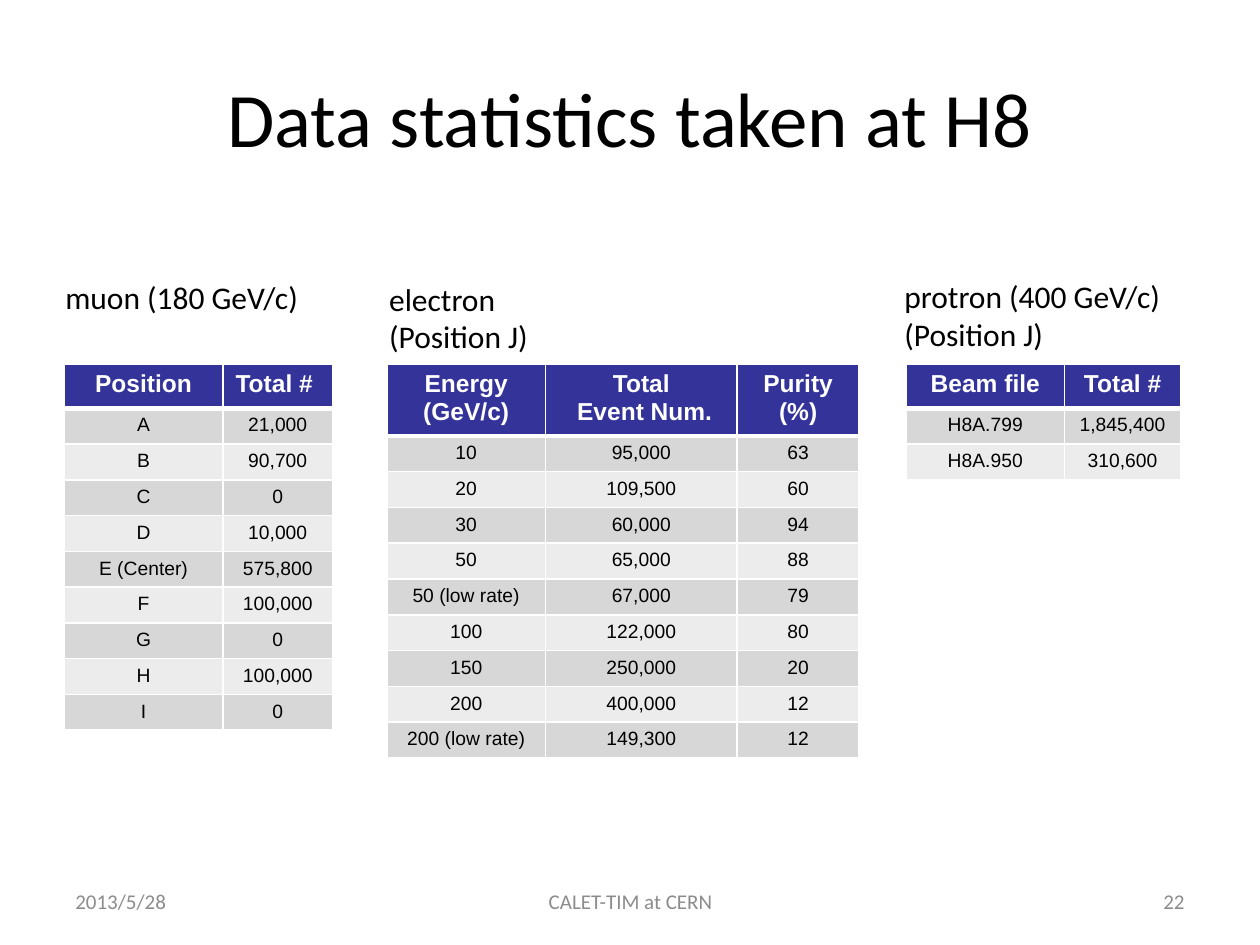
from dataclasses import dataclass

from lxml.etree import SubElement
from pptx import Presentation
from pptx.dml.color import RGBColor
from pptx.enum.text import MSO_ANCHOR, MSO_AUTO_SIZE, PP_ALIGN
from pptx.oxml.ns import qn
from pptx.slide import Slide
from pptx.table import _Cell
from pptx.text.text import TextFrame
from pptx.util import Inches, Pt

WHITE = RGBColor(0xFF, 0xFF, 0xFF)
BLACK = RGBColor(0x00, 0x00, 0x00)
GREY = RGBColor(0x8C, 0x8C, 0x8C)
NAVY = RGBColor(0x33, 0x33, 0x99)
BANDS = (RGBColor(0xD7, 0xD7, 0xD7), RGBColor(0xEC, 0xEC, 0xEC))

TABLE_TOP = Inches(2.89)
BODY_ROW_HEIGHT = Inches(2.55) // 9


@dataclass
class Label:
    text: str
    left: float
    top: float
    width: float
    height: float
    align: PP_ALIGN = PP_ALIGN.LEFT


@dataclass
class BeamTable:
    left: float
    columns: list[float]
    header_height: float
    header: list[str]
    rows: list[list[str]]
    last_header_align: PP_ALIGN = PP_ALIGN.CENTER


def write(frame: TextFrame, text: str, size: int, color: RGBColor,
          font: str = "Calibri", align: PP_ALIGN = PP_ALIGN.LEFT,
          bold: bool = False) -> None:
    for index, line in enumerate(text.split("\n")):
        paragraph = frame.add_paragraph() if index else frame.paragraphs[0]
        paragraph.alignment = align
        run = paragraph.add_run()
        run.text = line
        run.font.name = font
        run.font.size = Pt(size)
        run.font.bold = bold
        run.font.color.rgb = color


def add_label(slide: Slide, label: Label, size: int, color: RGBColor,
              anchor: MSO_ANCHOR, wrap: bool) -> None:
    box = slide.shapes.add_textbox(Inches(label.left), Inches(label.top),
                                   Inches(label.width), Inches(label.height))
    frame = box.text_frame
    frame.word_wrap = wrap
    frame.auto_size = MSO_AUTO_SIZE.NONE if wrap else MSO_AUTO_SIZE.SHAPE_TO_FIT_TEXT
    frame.vertical_anchor = anchor
    write(frame, label.text, size, color, align=label.align)


def set_borders(cell: _Cell, top: int, bottom: int) -> None:
    properties = cell._tc.get_or_add_tcPr()
    for side, width in (("L", 1), ("R", 1), ("T", top), ("B", bottom)):
        line = SubElement(properties, qn(f"a:ln{side}"), w=str(Pt(width)))
        fill = SubElement(line, qn("a:solidFill"))
        SubElement(fill, qn("a:srgbClr"), val=str(WHITE))


def add_beam_table(slide: Slide, beam: BeamTable) -> None:
    header_height = Inches(beam.header_height)
    table = slide.shapes.add_table(
        len(beam.rows) + 1, len(beam.columns), Inches(beam.left), TABLE_TOP,
        Inches(sum(beam.columns)),
        header_height + BODY_ROW_HEIGHT * len(beam.rows)).table
    for column, width in zip(table.columns, beam.columns):
        column.width = Inches(width)
    for r, values in enumerate([beam.header, *beam.rows]):
        table.rows[r].height = BODY_ROW_HEIGHT if r else header_height
        for c, value in enumerate(values):
            cell = table.cell(r, c)
            # Thick rule between the header and the body
            set_borders(cell, top=3 if r == 1 else 1, bottom=1 if r else 3)
            cell.fill.solid()
            cell.fill.fore_color.rgb = BANDS[(r - 1) % 2] if r else NAVY
            is_last_header = r == 0 and c == len(values) - 1
            align = beam.last_header_align if is_last_header else PP_ALIGN.CENTER
            write(cell.text_frame, value, 11 if r else 14,
                  BLACK if r else WHITE, "Arial", align, bold=r == 0)


BEAM_LABELS = [
    Label("muon (180 GeV/c)", 0.42, 2.16, 2.07, 0.4),
    Label("electron\n(Position J)", 2.99, 2.17, 1.32, 0.71),
    Label("protron (400 GeV/c)\n(Position J)", 7.08, 2.15, 2.26, 0.71),
]

FOOTER_LABELS = [
    Label("2013/5/28", 0.5, 6.95, 2.33, 0.4),
    Label("CALET-TIM at CERN", 3.42, 6.95, 3.17, 0.4, PP_ALIGN.CENTER),
    Label("22", 7.17, 6.95, 2.33, 0.4, PP_ALIGN.RIGHT),
]

BEAM_TABLES = [
    BeamTable(0.51, [1.26, 0.87], 0.35, ["Position", "Total #"], [
        ["A", "21,000"],
        ["B", "90,700"],
        ["C", "0"],
        ["D", "10,000"],
        ["E (Center)", "575,800"],
        ["F", "100,000"],
        ["G", "0"],
        ["H", "100,000"],
        ["I", "0"],
    ], PP_ALIGN.LEFT),
    BeamTable(3.07, [1.26, 1.52, 0.97], 0.57,
              ["Energy\n(GeV/c)", "Total\n Event Num.", "Purity\n(%)"], [
        ["10", "95,000", "63"],
        ["20", "109,500", "60"],
        ["30", "60,000", "94"],
        ["50", "65,000", "88"],
        ["50 (low rate)", "67,000", "79"],
        ["100", "122,000", "80"],
        ["150", "250,000", "20"],
        ["200", "400,000", "12"],
        ["200 (low rate)", "149,300", "12"],
    ]),
    BeamTable(7.19, [1.26, 0.92], 0.35, ["Beam file", "Total #"], [
        ["H8A.799", "1,845,400"],
        ["H8A.950", "310,600"],
    ]),
]


def main() -> None:
    presentation = Presentation()
    presentation.slide_width = Inches(10)
    presentation.slide_height = Inches(7.5)
    slide = presentation.slides.add_slide(presentation.slide_layouts[5])

    # Title
    title = slide.shapes.title
    title.left, title.top = Inches(0.5), Inches(0.3)
    title.width, title.height = Inches(9), Inches(1.25)
    title.text_frame.vertical_anchor = MSO_ANCHOR.MIDDLE
    write(title.text_frame, "Data statistics taken at H8", 44, BLACK,
          align=PP_ALIGN.CENTER)

    # Beam headings and their tables
    for label in BEAM_LABELS:
        add_label(slide, label, 18, BLACK, MSO_ANCHOR.TOP, wrap=False)
    for beam in BEAM_TABLES:
        add_beam_table(slide, beam)

    # Date, footer and slide number
    for label in FOOTER_LABELS:
        add_label(slide, label, 12, GREY, MSO_ANCHOR.MIDDLE, wrap=True)

    presentation.save("out.pptx")


if __name__ == "__main__":
    main()
